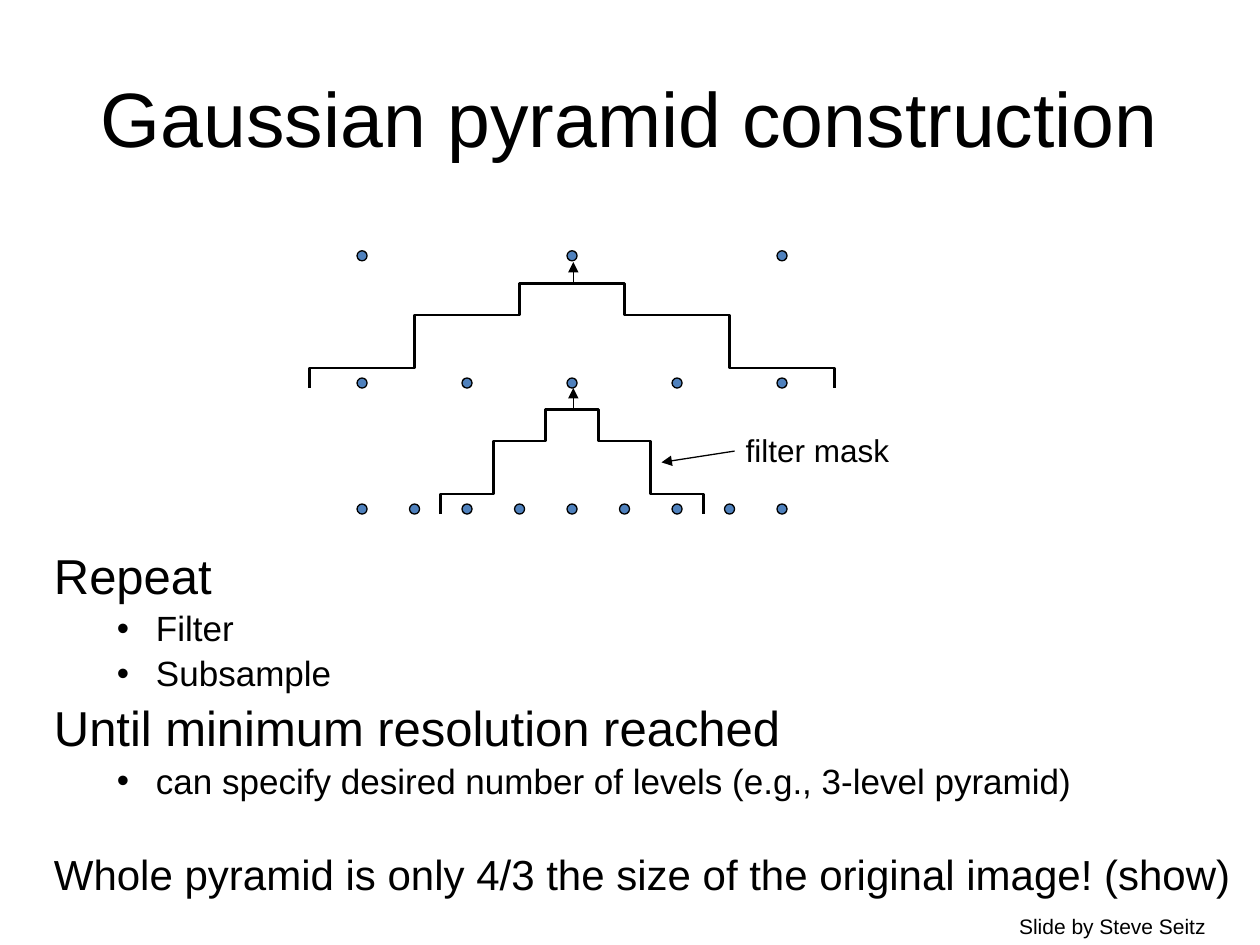
from dataclasses import dataclass

from lxml.etree import SubElement
from pptx import Presentation
from pptx.dml.color import RGBColor
from pptx.enum.shapes import MSO_CONNECTOR, MSO_SHAPE
from pptx.enum.text import MSO_ANCHOR, PP_ALIGN
from pptx.oxml.ns import qn
from pptx.shapes.autoshape import Shape
from pptx.slide import Slide
from pptx.text.text import _Paragraph as Paragraph
from pptx.util import Inches, Pt


@dataclass(frozen=True)
class Theme:
    font: str = "Arial"
    ink: RGBColor = RGBColor(0, 0, 0)
    dot: RGBColor = RGBColor(0x4F, 0x81, 0xBD)
    paper: RGBColor = RGBColor(255, 255, 255)
    title: int = 44
    heading: int = 28
    closing: int = 24
    bullet: int = 20
    label: int = 18
    credit: int = 12
    thin: float = 0.75
    thick: float = 1.5


@dataclass(frozen=True)
class Level:
    top: float
    dots: int
    spacing: float


@dataclass(frozen=True)
class Line:
    text: str
    size: int
    bulleted: bool = False
    extra_space: float = 0


THEME = Theme()
CENTER = 4.54
DOT = 0.08
SPACING = 5 / 12
LEVELS = [
    Level(4.0, 9, SPACING),
    Level(3.0, 5, 2 * SPACING),
    Level(1.99, 3, 4 * SPACING),
]
# Top of each filter mask and the width of one of its steps
MASKS = [(3.25, SPACING), (2.25, 2 * SPACING)]
# Half width in steps, and height below the top of the mask
STAIRS = [(2.5, 0.83), (2.5, 0.67), (1.5, 0.67), (1.5, 0.25), (0.5, 0.25), (0.5, 0)]
LINES = [
    Line("Repeat", THEME.heading),
    Line("Filter", THEME.bullet, bulleted=True),
    Line("Subsample", THEME.bullet, bulleted=True),
    Line("Until minimum resolution reached", THEME.heading),
    Line("can specify desired number of levels (e.g., 3-level pyramid)",
         THEME.bullet, bulleted=True),
    Line("Whole pyramid is only 4/3 the size of the original image! (show)",
         THEME.closing, extra_space=25),
]


def format_text(paragraph: Paragraph, size: int) -> None:
    for span in paragraph.runs:
        span.font.name = THEME.font
        span.font.size = Pt(size)
        span.font.color.rgb = THEME.ink


def add_title(page: Slide, text: str) -> None:
    title = page.shapes.title
    title.left, title.top = Inches(0.5), Inches(0.3)
    title.width, title.height = Inches(9), Inches(1.25)
    title.text_frame.text = text
    title.text_frame.vertical_anchor = MSO_ANCHOR.MIDDLE
    paragraph = title.text_frame.paragraphs[0]
    paragraph.alignment = PP_ALIGN.CENTER
    format_text(paragraph, THEME.title)


def add_level(page: Slide, level: Level) -> None:
    first = CENTER - (level.dots - 1) / 2 * level.spacing - DOT / 2
    for index in range(level.dots):
        dot = page.shapes.add_shape(
            MSO_SHAPE.OVAL, Inches(first + index * level.spacing),
            Inches(level.top), Inches(DOT), Inches(DOT))
        dot.shadow.inherit = False
        dot.fill.solid()
        dot.fill.fore_color.rgb = THEME.dot
        dot.line.color.rgb = THEME.ink
        dot.line.width = Pt(THEME.thin)


def add_mask(page: Slide, top: float, step: float) -> None:
    """Draw a symmetric staircase around the centre line."""
    left = [(CENTER - half * step, top + drop) for half, drop in STAIRS]
    right = [(CENTER + half * step, top + drop) for half, drop in reversed(STAIRS)]
    start, *rest = [(Inches(x), Inches(y)) for x, y in left + right]
    builder = page.shapes.build_freeform(*start)
    builder.add_line_segments(rest, close=False)
    outline = builder.convert_to_shape()
    outline.shadow.inherit = False
    outline.fill.background()
    outline.line.color.rgb = THEME.ink
    outline.line.width = Pt(THEME.thick)


def add_arrow(page: Slide, start: tuple[float, float], end: tuple[float, float]) -> None:
    arrow = page.shapes.add_connector(
        MSO_CONNECTOR.STRAIGHT, *(Inches(value) for value in start + end))
    arrow.line.color.rgb = THEME.ink
    arrow.line.width = Pt(THEME.thin)
    SubElement(arrow.line._get_or_add_ln(), qn("a:tailEnd"), type="triangle")
    SubElement(arrow._element.spPr, qn("a:effectLst"))


def add_label(page: Slide, text: str, size: int, left: float, top: float,
              width: float, height: float, wrap: bool) -> Shape:
    box = page.shapes.add_textbox(
        Inches(left), Inches(top), Inches(width), Inches(height))
    box.text_frame.text = text
    box.text_frame.word_wrap = wrap
    format_text(box.text_frame.paragraphs[0], size)
    return box


def add_outline(page: Slide, lines: list[Line]) -> None:
    box = page.shapes.add_textbox(Inches(0.33), Inches(4.33), Inches(9.67), Inches(2))
    frame = box.text_frame
    frame.word_wrap = True
    frame.text = "\n".join(line.text for line in lines)
    for paragraph, line in zip(frame.paragraphs, lines):
        paragraph.line_spacing = 0.9
        paragraph.space_before = Pt(0.2 * line.size + line.extra_space)
        format_text(paragraph, line.size)
        margin, indent = (0.81, -0.31) if line.bulleted else (0.38, -0.38)
        properties = paragraph._p.get_or_add_pPr()
        properties.set("marL", str(Inches(margin)))
        properties.set("indent", str(Inches(indent)))
        if line.bulleted:
            paragraph.level = 1
            SubElement(properties, qn("a:buFont"), typeface=THEME.font)
            SubElement(properties, qn("a:buChar"), char="•")
        else:
            SubElement(properties, qn("a:buNone"))


def main() -> None:
    deck = Presentation()
    deck.slide_width, deck.slide_height = Inches(10), Inches(7.5)
    page = deck.slides.add_slide(deck.slide_layouts[5])
    add_title(page, "Gaussian pyramid construction")
    for level in LEVELS:
        add_level(page, level)
    for top, step in MASKS:
        add_mask(page, top, step)
        add_arrow(page, (CENTER + 0.01, top), (CENTER + 0.01, top - 0.17))
    add_label(page, "filter mask", THEME.label, 5.82, 3.37, 1.34, 0.4, wrap=False)
    add_arrow(page, (5.83, 3.58), (5.25, 3.67))
    add_outline(page, LINES)
    credit = add_label(page, "Slide by Steve Seitz", THEME.credit,
                       7.99, 7.2, 2.6, 0.3, wrap=True)
    credit.fill.solid()
    credit.fill.fore_color.rgb = THEME.paper
    deck.save("out.pptx")


if __name__ == "__main__":
    main()
